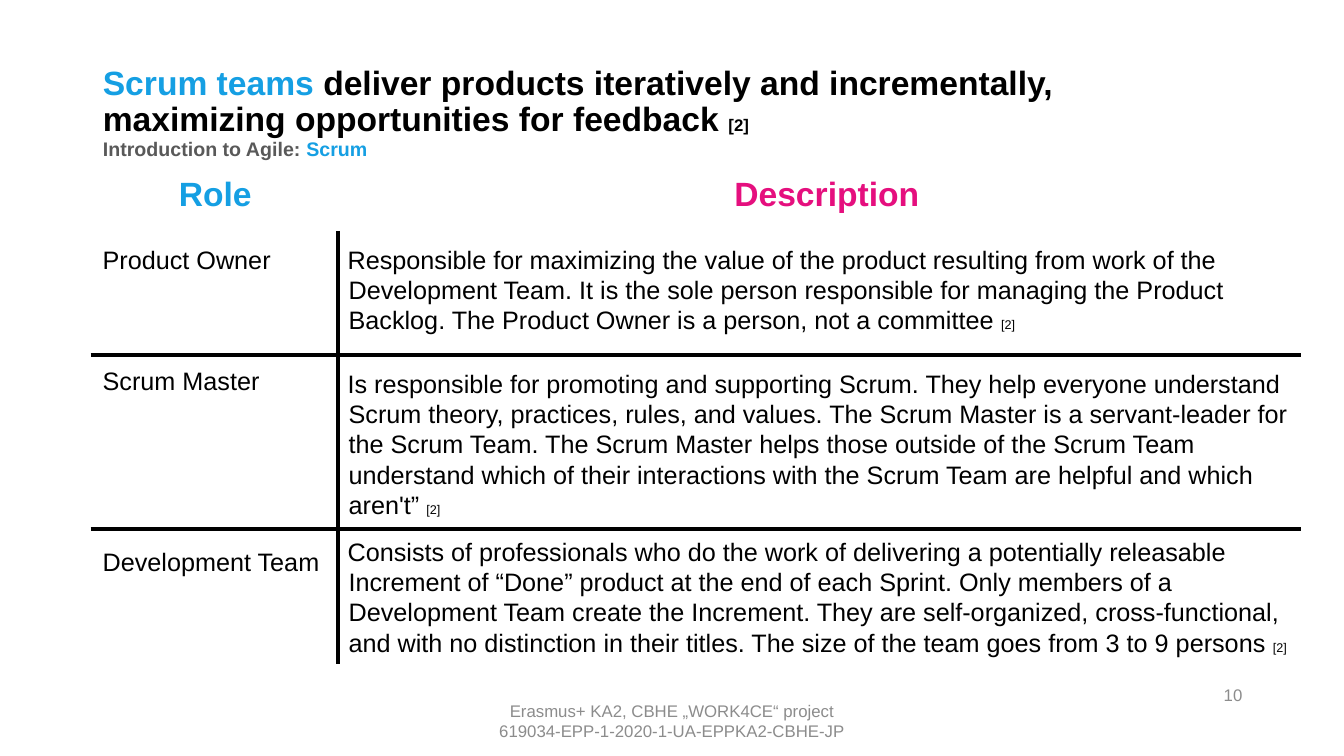
from lxml.etree import SubElement
from pptx import Presentation
from pptx.dml.color import RGBColor as RGB
from pptx.enum.shapes import MSO_CONNECTOR as Conn
from pptx.enum.text import MSO_ANCHOR as Anchor, MSO_AUTO_SIZE as Fit, PP_ALIGN as Align
from pptx.oxml.ns import qn
from pptx.util import Inches, Pt

BLUE, PINK, BLACK, GRAY = "159FE3", "E50F7E", "000000", "8C8C8C"


def write(para, runs, bold=False):
    for text, size, color in runs:
        for i, line in enumerate(text.split("\n")):
            if i:
                para.add_line_break()
                SubElement(para._p[-1], qn("a:rPr"), sz=str(size * 100))
            if line:
                run = para.add_run()
                run.text = line
                font = run.font
                font.name, font.size, font.bold = "Arial", Pt(size), bold
                font.color.rgb = RGB.from_string(color)


def add_box(left, top, width, height, wrap=True):
    box = slide.shapes.add_textbox(Inches(left), Inches(top), Inches(width), Inches(height))
    box.text_frame.word_wrap = wrap
    return box.text_frame


prs = Presentation()
prs.slide_width, prs.slide_height = Inches(13.33), Inches(7.5)
slide = prs.slides.add_slide(prs.slide_layouts[5])

title = slide.shapes.title
title.left, title.top = Inches(0.92), Inches(0.88)
title.width, title.height = Inches(11.5), Inches(0.49)
frame = title.text_frame
frame.word_wrap, frame.auto_size = True, Fit.NONE
frame.vertical_anchor = Anchor.MIDDLE
para = frame.paragraphs[0]
para.alignment, para.line_spacing = Align.LEFT, 0.9
para.space_before = Pt(0)
write(para, [
    ("Scrum teams ", 24, BLUE),
    ("deliver products iteratively and incrementally, maximizing opportunities for feedback ", 24, BLACK),
    ("[2]\n", 12, BLACK),
    ("Introduction to Agile: ", 14, "595959"),
    ("Scrum", 14, BLUE),
], True)

frame = add_box(4.84, 6.9, 3.65, 0.5, False)
frame.auto_size = Fit.SHAPE_TO_FIT_TEXT
para = frame.paragraphs[0]
para.alignment = Align.CENTER
write(para, [("Erasmus+ KA2, CBHE „WORK4CE“ project\n619034-EPP-1-2020-1-UA-EPPKA2-CBHE-JP", 12, GRAY)])

frame = add_box(11.47, 6.69, 0.95, 0.4)
frame.vertical_anchor = Anchor.MIDDLE
para = frame.paragraphs[0]
para.alignment = Align.RIGHT
write(para, [("10", 12, GRAY)])

columns = [
    (0.92, 2.43, "Role", BLUE, "", [
        (21.6, "Product Owner"),
        (64.8, "Scrum Master"),
        (108, "Development Team"),
    ]),
    (3.35, 9.7, "Description", PINK, "[2]", [
        (21.6, "Responsible for maximizing the value of the product resulting from work of the "
               "Development Team. It is the sole person responsible for managing the Product "
               "Backlog. The Product Owner is a person, not a committee "),
        (24, "Is responsible for promoting and supporting Scrum. They help everyone understand "
             "Scrum theory, practices, rules, and values. The Scrum Master is a servant-leader for "
             "the Scrum Team. The Scrum Master helps those outside of the Scrum Team "
             "understand which of their interactions with the Scrum Team are helpful and which "
             "aren't” "),
        (12, "Consists of professionals who do the work of delivering a potentially releasable "
             "Increment of “Done” product at the end of each Sprint. Only members of a "
             "Development Team create the Increment. They are self-organized, cross-functional, "
             "and with no distinction in their titles. The size of the team goes from 3 to 9 persons "),
    ]),
]
for left, width, head, color, cite, items in columns:
    frame = add_box(left, 1.67, width, 5.22)
    para = frame.paragraphs[0]
    para.alignment = Align.CENTER
    write(para, [(head, 24, color)], True)
    for gap, text in items:
        para = frame.add_paragraph()
        para.space_before = Pt(gap)
        write(para, [(text, 18, BLACK), (cite, 9, BLACK)])
    for para in frame.paragraphs:
        props = para._p.get_or_add_pPr()
        props.set("marL", str(Inches(0.01)))
        props.set("indent", str(Inches(-0.01)))

for ends in [(3.35, 2.29, 3.35, 6.59), (0.9, 3.52, 12.9, 3.52), (0.9, 5.25, 12.9, 5.25)]:
    rule = slide.shapes.add_connector(Conn.STRAIGHT, *map(Inches, ends))
    rule.line.color.rgb = RGB.from_string(BLACK)
    rule.line.width = Pt(3)
    SubElement(rule._element.spPr, qn("a:effectLst"))

prs.save("out.pptx")
